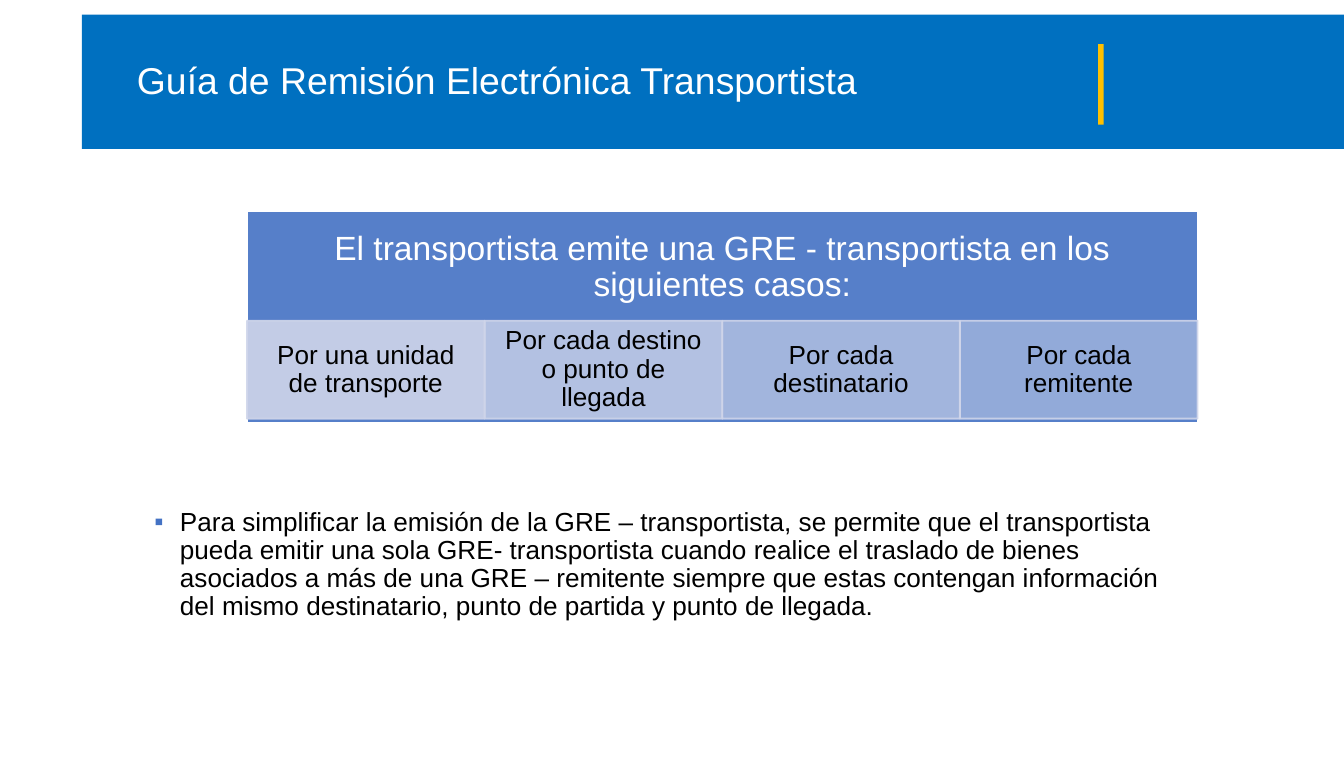
from lxml.etree import SubElement
from pptx import Presentation
from pptx.dml.color import RGBColor
from pptx.enum.shapes import MSO_SHAPE
from pptx.enum.text import MSO_ANCHOR, MSO_AUTO_SIZE, PP_ALIGN
from pptx.oxml.ns import qn
from pptx.util import Inches, Pt

CASES = [
    ("Por una unidad de transporte", 90),
    ("Por cada destino o punto de llegada", 77),
    ("Por cada destinatario", 63),
    ("Por cada remitente", 50),
]
NOTE = (
    "Para simplificar la emisión de la GRE – transportista, se permite que el "
    "transportista pueda emitir una sola GRE- transportista cuando realice el "
    "traslado de bienes asociados a más de una GRE – remitente siempre que estas "
    "contengan información del mismo destinatario, punto de partida y punto de llegada."
)


def paint(color, tone, alpha=100):
    color.rgb = RGBColor.from_string(tone)
    if alpha < 100:
        for node in color._xFill.iter(qn("a:srgbClr")):
            SubElement(node, qn("a:alpha"), val=str(alpha * 1000))


def place(shape, left, top, width, height):
    shape.left, shape.top = Inches(left), Inches(top)
    shape.width, shape.height = Inches(width), Inches(height)


def write(shape, text, size=14, tone="000000", align=PP_ALIGN.LEFT,
          anchor=MSO_ANCHOR.MIDDLE, inset=(0.1, 0.05, 0.1, 0.05), bullet=None):
    frame = shape.text_frame
    frame.word_wrap = True
    frame.auto_size = MSO_AUTO_SIZE.NONE
    frame.vertical_anchor = anchor
    (frame.margin_left, frame.margin_top,
     frame.margin_right, frame.margin_bottom) = map(Inches, inset)
    para = frame.paragraphs[0]
    para.text = text
    para.alignment = align
    para.line_spacing = 0.9
    para.space_before = Pt(0)
    if bullet:
        props = para._p.get_or_add_pPr()
        props.set("marL", str(Inches(0.19)))
        props.set("indent", str(-Inches(0.19)))
        hue = SubElement(props, qn("a:buClr"))
        SubElement(hue, qn("a:srgbClr"), val="4472C4")
        SubElement(props, qn("a:buFont"), typeface="Arial")
        SubElement(props, qn("a:buChar"), char=bullet)
    font = para.runs[0].font
    font.name, font.size = "Arial", Pt(size)
    paint(font.color, tone)


def block(slide, box, tone, alpha=100, edge=None, clear=100):
    shape = slide.shapes.add_shape(MSO_SHAPE.RECTANGLE, *map(Inches, box))
    shape.shadow.inherit = False
    shape.fill.solid()
    paint(shape.fill.fore_color, tone, alpha)
    if edge:
        shape.line.width = Pt(1)
        shape.line.fill.solid()
        paint(shape.line.fill.fore_color, edge, clear)
    else:
        shape.line.fill.background()
    return shape


def banner(slide, left, top, width, height):
    block(slide, (left, top, width, height), "0070C0")
    block(slide, (left + 7.57, top + 0.22, 0.04, 0.6), "FFC000")
    title = slide.shapes.title
    place(title, left + 0.31, top + 0.13, 7.49, 0.75)
    write(title, "Guía de Remisión Electrónica Transportista", size=20, tone="FFFFFF")
    title.element.getparent().append(title.element)


def panel(slide, left, top, width, height):
    head = block(slide, (left, top, width, height), "4472C4", 90, "FFFFFF")
    write(head, "El transportista emite una GRE - transportista en los siguientes casos:",
          size=18, tone="FFFFFF", align=PP_ALIGN.CENTER,
          inset=(0.14, 0.14, 0.14, height - 0.71))
    step = width / len(CASES)
    for col, (text, alpha) in enumerate(CASES):
        box = (left + col * step, top + 0.82, step, 0.73)
        cell = block(slide, box, "CFD5EA", alpha, "CFD5EA", 90)
        write(cell, text, align=PP_ALIGN.CENTER, inset=(0.11, 0.02, 0.11, 0.02))


def note(slide, left, top, width, height):
    body = slide.placeholders[1]
    place(body, left, top, width, height)
    write(body, NOTE, anchor=MSO_ANCHOR.TOP, bullet="▪")


def main():
    deck = Presentation()
    deck.slide_width, deck.slide_height = Inches(10.01), Inches(5.64)
    slide = deck.slides.add_slide(deck.slide_layouts[1])
    banner(slide, 0.61, 0.11, 9.4, 1)
    panel(slide, 1.84, 1.57, 7.08, 1.58)
    note(slide, 1.05, 3.74, 7.92, 1.21)
    deck.save("out.pptx")


if __name__ == "__main__":
    main()
